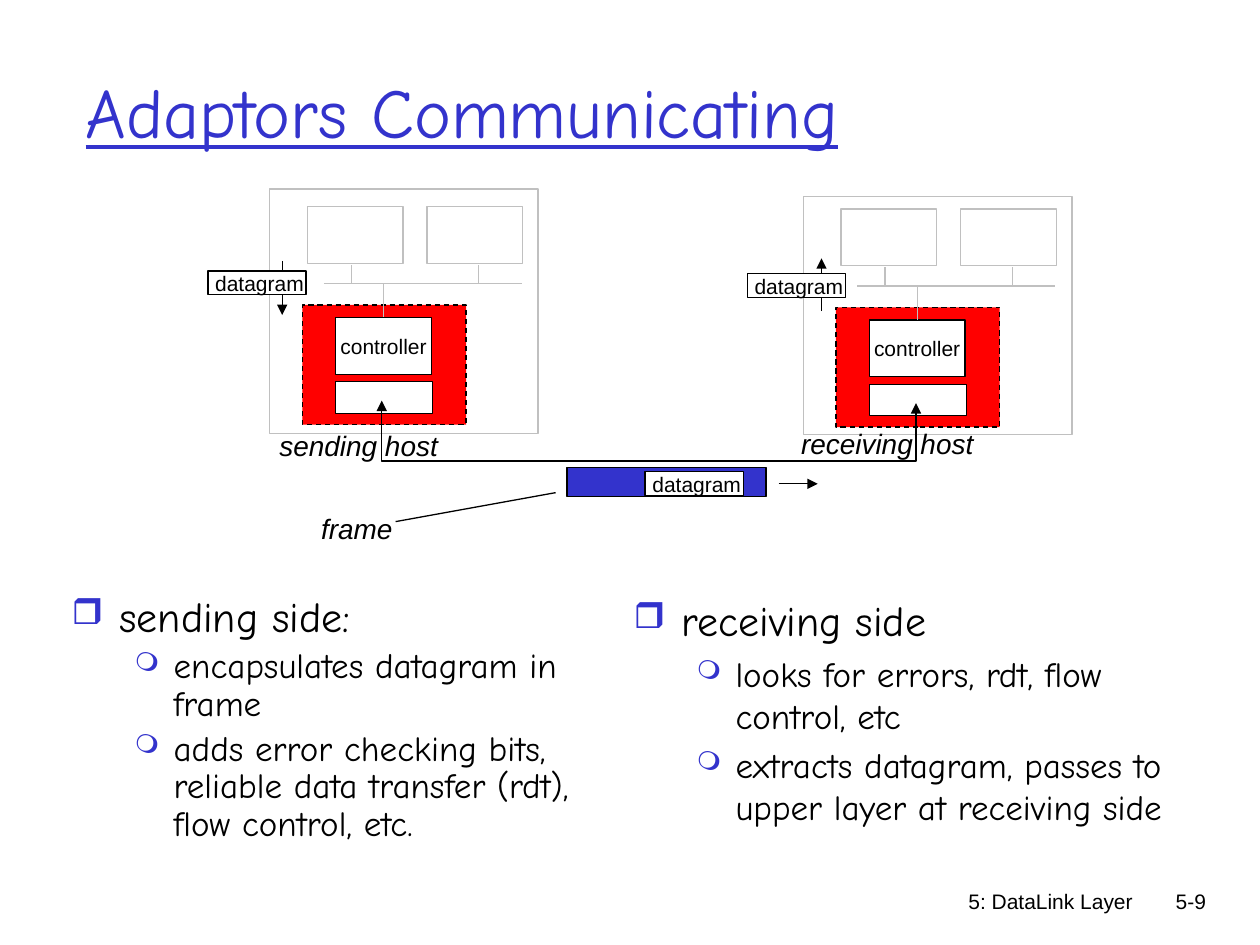
from dataclasses import dataclass

from lxml import etree
from pptx import Presentation
from pptx.dml.color import RGBColor
from pptx.enum.dml import MSO_LINE
from pptx.enum.shapes import MSO_CONNECTOR, MSO_SHAPE
from pptx.enum.text import MSO_ANCHOR, MSO_AUTO_SIZE, PP_ALIGN
from pptx.oxml.ns import qn
from pptx.util import Inches, Pt

RECTANGLE, STRAIGHT, DASH = MSO_SHAPE.RECTANGLE, MSO_CONNECTOR.STRAIGHT, MSO_LINE.DASH
LEFT, CENTER, RIGHT = PP_ALIGN.LEFT, PP_ALIGN.CENTER, PP_ALIGN.RIGHT
TOP, MIDDLE = MSO_ANCHOR.TOP, MSO_ANCHOR.MIDDLE
TITLE_ONLY = 5
TOP_SIDE = 0

COLORS = {"blue": "3333CC", "red": "FF0000", "gray": "C0C0C0",
          "black": "000000", "white": "FFFFFF"}
BODY_FONT, LABEL_FONT = "Comic Neue", "Arial"

# The slide is a grid of 100 columns by 75 rows of square cells.
WIDTH, HEIGHT = Inches(10), Inches(7.5)
COLUMN, ROW = WIDTH / 100, HEIGHT / 75


@dataclass(frozen=True)
class Box:
    column: float
    row: float
    columns: float
    rows: float

    def place(self) -> tuple[int, int, int, int]:
        return (round(self.column * COLUMN), round(self.row * ROW),
                round(self.columns * COLUMN), round(self.rows * ROW))


@dataclass(frozen=True)
class Host:
    frame: Box
    bus: tuple[float, float]
    label: str
    label_box: Box
    datagram: tuple[float, float]
    arrow: tuple[float, float, float]  # column, start row, end row


@dataclass(frozen=True)
class Side:
    box: Box
    heading: str
    points: tuple[str, ...]
    line_spacing: float


HOSTS = (
    Host(Box(21.4, 15, 21.3, 19.4), (25.7, 22.5), "sending host",
         Box(21.2, 33.5, 14.6, 3.7), (16.5, 21.5), (22.4, 20.7, 25)),
    Host(Box(63.8, 15.6, 21.3, 18.9), (68.05, 22.7), "receiving host",
         Box(62.6, 33.4, 15.7, 3.7), (59.3, 21.7), (65.2, 24.7, 20.5)),
)
SIDES = (
    Side(Box(4.7, 46.8, 44.5, 21.2), "sending side:",
         ("encapsulates datagram in frame",
          "adds error checking bits, reliable data transfer (rdt), flow control, etc."), 0.9),
    Side(Box(49.3, 46.7, 44.7, 20.2), "receiving side",
         ("looks for errors, rdt, flow control, etc",
          "extracts datagram, passes to upper layer at receiving side"), 1.0),
)


def color(name: str) -> RGBColor:
    return RGBColor.from_string(COLORS[name])


def write(paragraph, text: str, *, size: float, font: str = LABEL_FONT, ink: str = "black",
          align=LEFT, italic: bool = False, underline: bool = False) -> None:
    paragraph.alignment = align
    run = paragraph.add_run()
    run.text = text
    run.font.size, run.font.name = Pt(size), font
    run.font.italic, run.font.underline = italic, underline
    run.font.color.rgb = color(ink)


def add_text_box(slide, box: Box, *, wrap: bool):
    text_frame = slide.shapes.add_textbox(*box.place()).text_frame
    text_frame.word_wrap = wrap
    text_frame.vertical_anchor = TOP
    return text_frame


def add_label(slide, box: Box, text: str, *, wrap: bool = False, **text_format) -> None:
    text_frame = add_text_box(slide, box, wrap=wrap)
    if not wrap:
        text_frame.auto_size = MSO_AUTO_SIZE.SHAPE_TO_FIT_TEXT
    write(text_frame.paragraphs[0], text, **text_format)


def style_line(line, ink: str) -> None:
    line.color.rgb = color(ink)
    line.width = Pt(0.75)


def add_arrowheads(line, *ends: str) -> None:
    """Add triangles at the given ends, headEnd before tailEnd."""
    for end in ends:
        etree.SubElement(line._get_or_add_ln(), qn(f"a:{end}"), type="triangle")


def add_rectangle(slide, box: Box, fill: str = "white", ink: str = "black"):
    shape = slide.shapes.add_shape(RECTANGLE, *box.place())
    shape.shadow.inherit = False
    shape.fill.solid()
    shape.fill.fore_color.rgb = color(fill)
    style_line(shape.line, ink)
    return shape


def add_line(slide, start: tuple[float, float], end: tuple[float, float],
             ink: str = "black", arrow: bool = False):
    connector = slide.shapes.add_connector(
        STRAIGHT, round(start[0] * COLUMN), round(start[1] * ROW),
        round(end[0] * COLUMN), round(end[1] * ROW))
    style_line(connector.line, ink)
    if arrow:
        add_arrowheads(connector.line, "tailEnd")
    etree.SubElement(connector._element.spPr, qn("a:effectLst"))
    return connector


def add_datagram(slide, column: float, row: float) -> None:
    add_rectangle(slide, Box(column, row, 7.8, 1.9))
    add_label(slide, Box(column - 0.4, row - 0.5, 9.6, 3), "datagram", size=12)


def add_host(slide, host: Host) -> None:
    column, row = host.bus
    add_rectangle(slide, host.frame, ink="gray")
    adaptor = add_rectangle(slide, Box(column - 1.7, row + 1.7, 13, 9.5), "red")
    adaptor.line.dash_style = DASH
    add_rectangle(slide, Box(column + 0.95, row + 7.8, 7.7, 2.5))

    controller = add_rectangle(slide, Box(column + 0.95, row + 2.7, 7.6, 4.5))
    controller.text_frame.word_wrap = False
    controller.text_frame.vertical_anchor = MIDDLE
    write(controller.text_frame.paragraphs[0], "controller", size=12, align=CENTER)

    add_line(slide, host.bus, (column + 15.7, row), "gray")
    middle = column + 0.95 + 7.6 / 2
    stem = add_line(slide, (middle, row), (middle, row + 2.7), "gray")
    stem.end_connect(controller, TOP_SIDE)
    for device, drop in ((-1.3, 2.2), (8.2, 12.3)):
        add_rectangle(slide, Box(column + device, row - 6.1, 7.6, 4.5), ink="gray")
        add_line(slide, (column + drop, row), (column + drop, row - 1.5), "gray")

    add_label(slide, host.label_box, host.label, size=16, italic=True)
    arrow_column, start, end = host.arrow
    add_line(slide, (arrow_column, start), (arrow_column, end), arrow=True)
    add_datagram(slide, *host.datagram)


def add_link(slide) -> None:
    """Draw the wire between the hosts, in tenths of a grid cell."""
    builder = slide.shapes.build_freeform(303, 318, scale=(COLUMN / 10, ROW / 10))
    builder.add_line_segments([(303, 366), (727, 366), (727, 320)], close=False)
    link = builder.convert_to_shape()
    link.shadow.inherit = False
    link.fill.background()
    style_line(link.line, "black")
    add_arrowheads(link.line, "headEnd", "tailEnd")


def set_bullet(paragraph, character: str, percent: int, margin: float, hanging: float) -> None:
    properties = paragraph._p.get_or_add_pPr()
    properties.set("marL", str(Inches(margin)))
    properties.set("indent", str(-Inches(hanging)))
    bullet_color = etree.SubElement(properties, qn("a:buClr"))
    etree.SubElement(bullet_color, qn("a:srgbClr"), val=COLORS["blue"])
    etree.SubElement(properties, qn("a:buSzPct"), val=str(percent * 1000))
    etree.SubElement(properties, qn("a:buChar"), char=character)


def add_side(slide, side: Side) -> None:
    text_frame = add_text_box(slide, side.box, wrap=True)
    for index, text in enumerate((side.heading, *side.points)):
        paragraph = text_frame.add_paragraph() if index else text_frame.paragraphs[0]
        paragraph.level = 1 if index else 0
        size = 20 if index else 24
        paragraph.line_spacing = side.line_spacing
        paragraph.space_before = Pt(size * 0.2)
        write(paragraph, text, size=size, font=BODY_FONT)
        set_bullet(paragraph, *(("❍", 75, 0.81, 0.31) if index else ("❒", 85, 0.38, 0.38)))


def add_title(slide, text: str) -> None:
    title = slide.shapes.title
    title.left, title.top, title.width, title.height = Box(5.8, 2.5, 85, 12.5).place()
    title.text_frame.vertical_anchor = MIDDLE
    title.text_frame.auto_size = MSO_AUTO_SIZE.NONE
    write(title.text_frame.paragraphs[0], text, size=40, font=BODY_FONT, ink="blue",
          underline=True)


def main() -> None:
    presentation = Presentation()
    presentation.slide_width, presentation.slide_height = WIDTH, HEIGHT
    slide = presentation.slides.add_slide(presentation.slide_layouts[TITLE_ONLY])
    add_title(slide, "Adaptors Communicating")
    for side in SIDES:
        add_side(slide, side)
    for host in HOSTS:
        add_host(slide, host)
    add_link(slide)

    add_rectangle(slide, Box(45, 37.1, 15.8, 2.3), "blue")
    add_datagram(slide, 51.2, 37.4)
    add_line(slide, (61.8, 38.4), (64.9, 38.4), arrow=True)
    add_label(slide, Box(24.5, 40.1, 7.7, 3.7), "frame", size=16, italic=True)
    add_line(slide, (31.4, 41.4), (44.1, 39.1))

    for box, text in ((Box(59.2, 70, 31.7, 5), "5: DataLink Layer"),
                      (Box(89.3, 70, 7.4, 5), "5-9")):
        add_label(slide, box, text, wrap=True, size=12, align=RIGHT)
    presentation.save("out.pptx")


if __name__ == "__main__":
    main()
